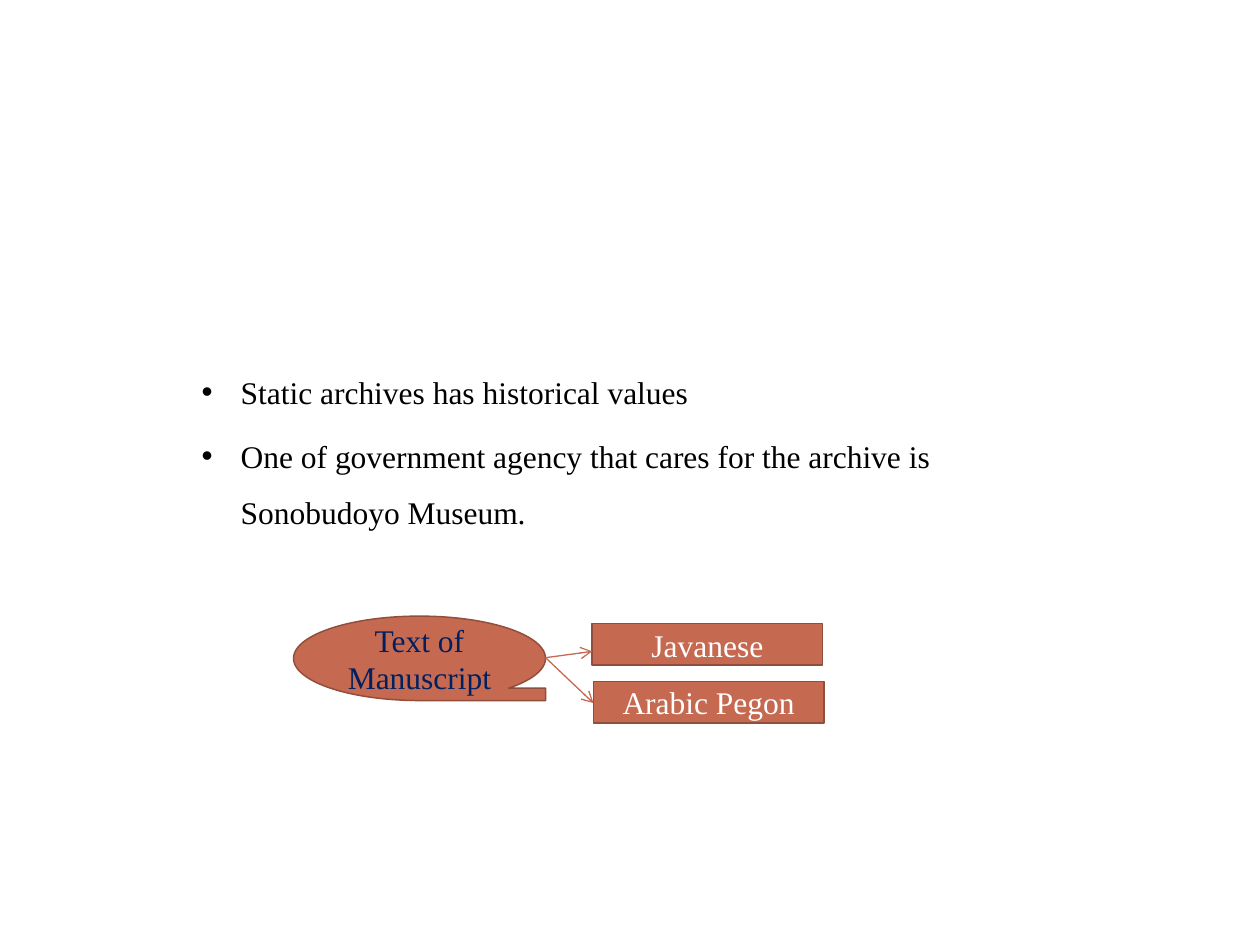
from pptx import Presentation
from pptx import util as u
from pptx.dml.color import RGBColor
from pptx.enum import shapes, text
from pptx.oxml.ns import qn
from lxml import etree

FONT = "Times New Roman"
BLACK = RGBColor(0x00, 0x00, 0x00)
WHITE = RGBColor(0xFF, 0xFF, 0xFF)
NAVY = RGBColor(0x00, 0x20, 0x60)
RUST = RGBColor(0xC6, 0x69, 0x51)
BROWN = RGBColor(0x92, 0x4E, 0x3C)

BULLETS = [
    "Static archives has historical values",
    "One of government agency that cares for the archive is Sonobudoyo Museum.",
]


def add_run(p, words, color):
    r = p.add_run()
    r.text = words
    r.font.name = FONT
    r.font.size = u.Pt(18)
    r.font.color.rgb = color


def place(sp, left, top, width, height):
    sp.left, sp.top = u.Inches(left), u.Inches(top)
    sp.width, sp.height = u.Inches(width), u.Inches(height)


def set_bullet(p):
    pPr = p._p.get_or_add_pPr()
    pPr.set("marL", str(u.Inches(0.31)))
    pPr.set("indent", str(-u.Inches(0.31)))
    etree.SubElement(pPr, qn("a:buFont")).set("typeface", "Arial")
    etree.SubElement(pPr, qn("a:buChar")).set("char", "•")


def fill_body(sp, items):
    place(sp, 1.5, 2.42, 7, 3.5)
    tf = sp.text_frame
    tf.auto_size = text.MSO_AUTO_SIZE.NONE
    tf.vertical_anchor = text.MSO_ANCHOR.TOP
    tf.margin_top = u.Inches(0.39)
    for i, item in enumerate(items):
        p = tf.add_paragraph() if i else tf.paragraphs[0]
        set_bullet(p)
        p.line_spacing = 1.5
        p.space_before = u.Pt(4 if i else 0)
        add_run(p, item, BLACK)


def add_node(group, kind, box, words, color):
    sp = group.shapes.add_shape(kind, *(u.Inches(n) for n in box))
    sp.shadow.inherit = False
    sp.fill.solid()
    sp.fill.fore_color.rgb = RUST
    sp.line.color.rgb = BROWN
    sp.line.width = u.Pt(0.85)
    tf = sp.text_frame
    tf.word_wrap = True
    tf.vertical_anchor = text.MSO_ANCHOR.MIDDLE
    p = tf.paragraphs[0]
    p.alignment = text.PP_ALIGN.CENTER
    add_run(p, words, color)


def add_arrow(group, start, end):
    line = group.shapes.add_connector(
        shapes.MSO_CONNECTOR.STRAIGHT, *(u.Inches(n) for n in start + end))
    line.line.color.rgb = RUST
    line.line.width = u.Pt(0.75)
    etree.SubElement(line.line._get_or_add_ln(), qn("a:tailEnd")).set("type", "arrow")
    etree.SubElement(line._element.spPr, qn("a:effectLst"))


def main():
    prs = Presentation()
    prs.slide_width, prs.slide_height = u.Inches(10), u.Inches(7.5)
    s = prs.slides.add_slide(prs.slide_layouts[1])
    title = s.shapes.title._element
    title.getparent().remove(title)
    fill_body(s.placeholders[1], BULLETS)

    group = s.shapes.add_group_shape()
    tape = shapes.MSO_SHAPE.FLOWCHART_SEQUENTIAL_ACCESS_STORAGE
    process = shapes.MSO_SHAPE.FLOWCHART_PROCESS
    add_node(group, tape, (2.33, 4.89, 2, 0.67), "Text of Manuscript", NAVY)
    add_node(group, process, (4.7, 4.95, 1.83, 0.33), "Javanese", WHITE)
    add_node(group, process, (4.71, 5.41, 1.83, 0.33), "Arabic Pegon", WHITE)
    for end in ((4.7, 5.17), (4.71, 5.58)):
        add_arrow(group, (4.33, 5.22), end)

    prs.save("out.pptx")


if __name__ == "__main__":
    main()
